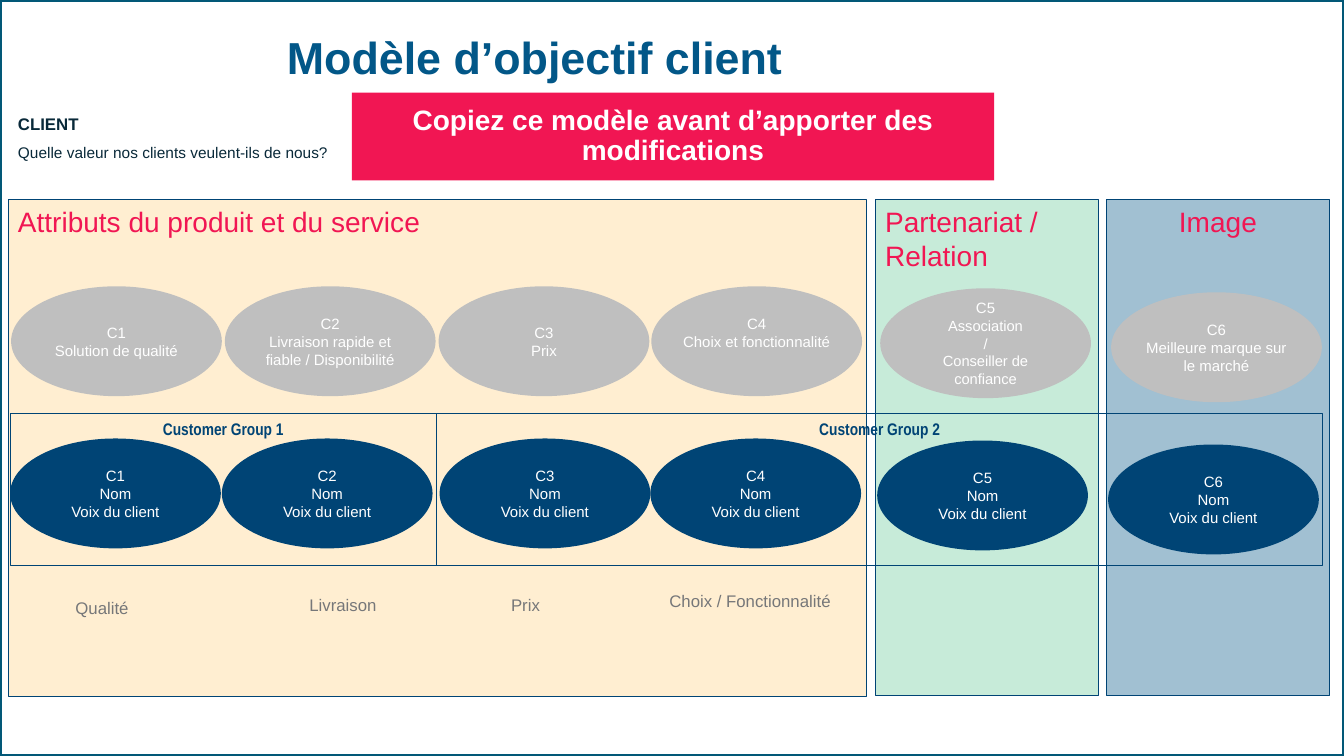
from pptx import Presentation
from pptx import util as u
from pptx.dml.color import RGBColor
from pptx.enum import shapes, text
from lxml import etree

COLORS = {
    "frame": "025877", "title": "025788", "navy": "004475", "pink": "F11653",
    "grey": "BFBFBF", "label": "767779", "ink": "092939", "white": "FFFFFF",
    "mint": "C7EBD9", "amber": "FFAA1B", "blue": "005687",
}
RECT = shapes.MSO_SHAPE.RECTANGLE
OVAL = shapes.MSO_SHAPE.OVAL
LEFT, MID = text.PP_ALIGN.LEFT, text.PP_ALIGN.CENTER
TOP, CENTER = text.MSO_ANCHOR.TOP, text.MSO_ANCHOR.MIDDLE


def rgb(name):
    return RGBColor.from_string(COLORS[name])


class Board:
    """Style and current slide."""
    font = "Arial"

    def __init__(self, slide):
        self.slide = slide

    def label(self, shape, words, size, color, bold=False, align=MID,
              anchor=TOP, font=None, gap=None, wrap=True):
        frame = shape.text_frame
        frame.text = words
        frame.word_wrap = wrap
        frame.vertical_anchor = anchor
        for para in frame.paragraphs:
            para.alignment = align
            if gap:
                para.line_spacing = gap
            para.font.name = font or self.font
            para.font.size = u.Pt(size)
            para.font.bold = bold
            para.font.color.rgb = rgb(color)
        return frame

    def shape(self, kind, box, fill=None, line=None, width=0.75, alpha=None):
        item = self.slide.shapes.add_shape(kind, *map(u.Inches, box))
        item.shadow.inherit = False
        if fill:
            item.fill.solid()
            item.fill.fore_color.rgb = rgb(fill)
        else:
            item.fill.background()
        if alpha:
            tone = item.element.spPr.find("{*}solidFill/{*}srgbClr")
            tag = tone.tag.replace("srgbClr", "alpha")
            etree.SubElement(tone, tag).set("val", str(alpha * 1000))
        if line:
            item.line.color.rgb = rgb(line)
            item.line.width = u.Pt(width)
        else:
            item.line.fill.background()
        return item

    def panel(self, left, width, height, words, fill, alpha, align):
        item = self.shape(RECT, (left, 1.98, width, height), fill, "navy",
                          alpha=alpha)
        self.label(item, words, 20, "pink", align=align)

    def group(self, left, width, words):
        item = self.shape(RECT, (left, 4.1, width, 1.51), line="navy")
        self.label(item, words, 12, "navy", True, font="Arial Narrow")

    def oval(self, left, top, words, fill, lift=0):
        item = self.shape(OVAL, (left, top, 2.09, 1.09), fill)
        frame = self.label(item, words, 10.7, "white", anchor=CENTER)
        frame.margin_left = frame.margin_right = 0
        frame.margin_bottom = u.Inches(0.05 + lift)
        return frame

    def note(self, box, words, size, color, **style):
        item = self.slide.shapes.add_textbox(*map(u.Inches, box))
        return self.label(item, words, size, color, **style)


def main():
    deck = Presentation()
    deck.slide_width, deck.slide_height = u.Inches(13.33), u.Inches(7.5)
    board = Board(deck.slides.add_slide(deck.slide_layouts[6]))

    # Frame and coloured panels
    board.shape(RECT, (0, 0, 13.33, 7.5), line="frame", width=3)
    board.panel(8.68, 2.22, 4.92, "Partenariat / Relation", "mint", None, LEFT)
    board.panel(0.08, 8.51, 4.93, "Attributs du produit et du service",
                "amber", 20, LEFT)
    board.panel(10.97, 2.22, 4.92, "Image", "blue", 37, MID)

    # Customer groups
    board.group(0.1, 4.23, "Customer Group 1")
    board.group(4.33, 8.79, "Customer Group 2")

    # Title
    board.note((0.37, 0.28, 9.87, 0.64), "Modèle d’objectif client", 32,
               "title", bold=True, anchor=CENTER, gap=0.9)

    # Customer voices
    voices = [(0.1, 4.35), (2.2, 4.35), (4.36, 4.35),
              (6.45, 4.35), (8.7, 4.37), (10.99, 4.41)]
    for num, (left, top) in enumerate(voices, 1):
        board.oval(left, top, f"C{num}\nNom\nVoix du client", "navy")

    # Customer goals
    goals = [
        (0.11, 2.84, "Solution de qualité", 0),
        (2.23, 2.84, "Livraison rapide et fiable / Disponibilité", 0),
        (4.35, 2.84, "Prix", 0),
        (6.46, 2.84, "Choix et fonctionnalité", 0.18),
        (8.73, 2.86, "Association\n/\nConseiller de confiance", 0),
        (11.02, 2.9, "Meilleure marque sur le marché", 0),
    ]
    for num, (left, top, words, lift) in enumerate(goals, 1):
        frame = board.oval(left, top, f"C{num}\n{words}", "grey", lift)
        if num == 5:
            for para in frame.paragraphs[1:]:
                para.font.size = u.Pt(10.5)

    # Labels under the groups
    labels = [(0.65, 5.88, 0.73, "Qualité"), (2.97, 5.85, 0.87, "Livraison"),
              (4.97, 5.85, 0.49, "Prix"),
              (6.54, 5.81, 1.81, "Choix / Fonctionnalité")]
    for left, top, width, words in labels:
        board.note((left, top, width, 0.3), words, 12, "label",
                   align=LEFT, wrap=False)

    # Banner
    banner = board.shape(RECT, (3.49, 0.92, 6.37, 0.87), "pink")
    board.label(banner, "Copiez ce modèle avant d’apporter des modifications",
                20, "white", True, anchor=CENTER, gap=0.9)

    # Client question
    client = board.note((0.08, 1.08, 5.94, 0.86),
                        "CLIENT\nQuelle valeur nos clients veulent-ils de nous?",
                        11, "ink", align=LEFT)
    head, ask = client.paragraphs
    head.font.size, head.font.bold = u.Pt(12), True
    ask.space_before = u.Pt(6.5)

    deck.save("out.pptx")


if __name__ == "__main__":
    main()
